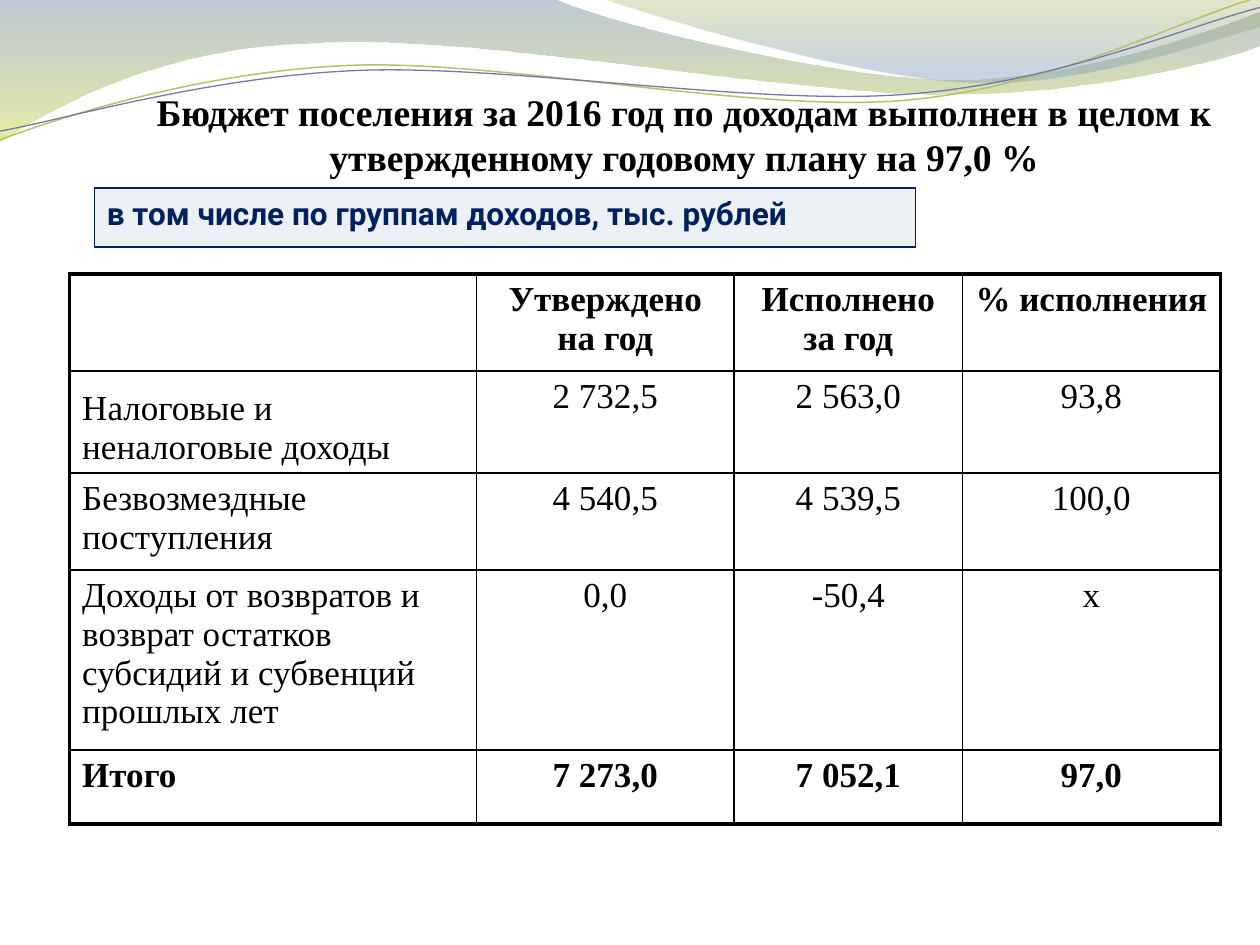
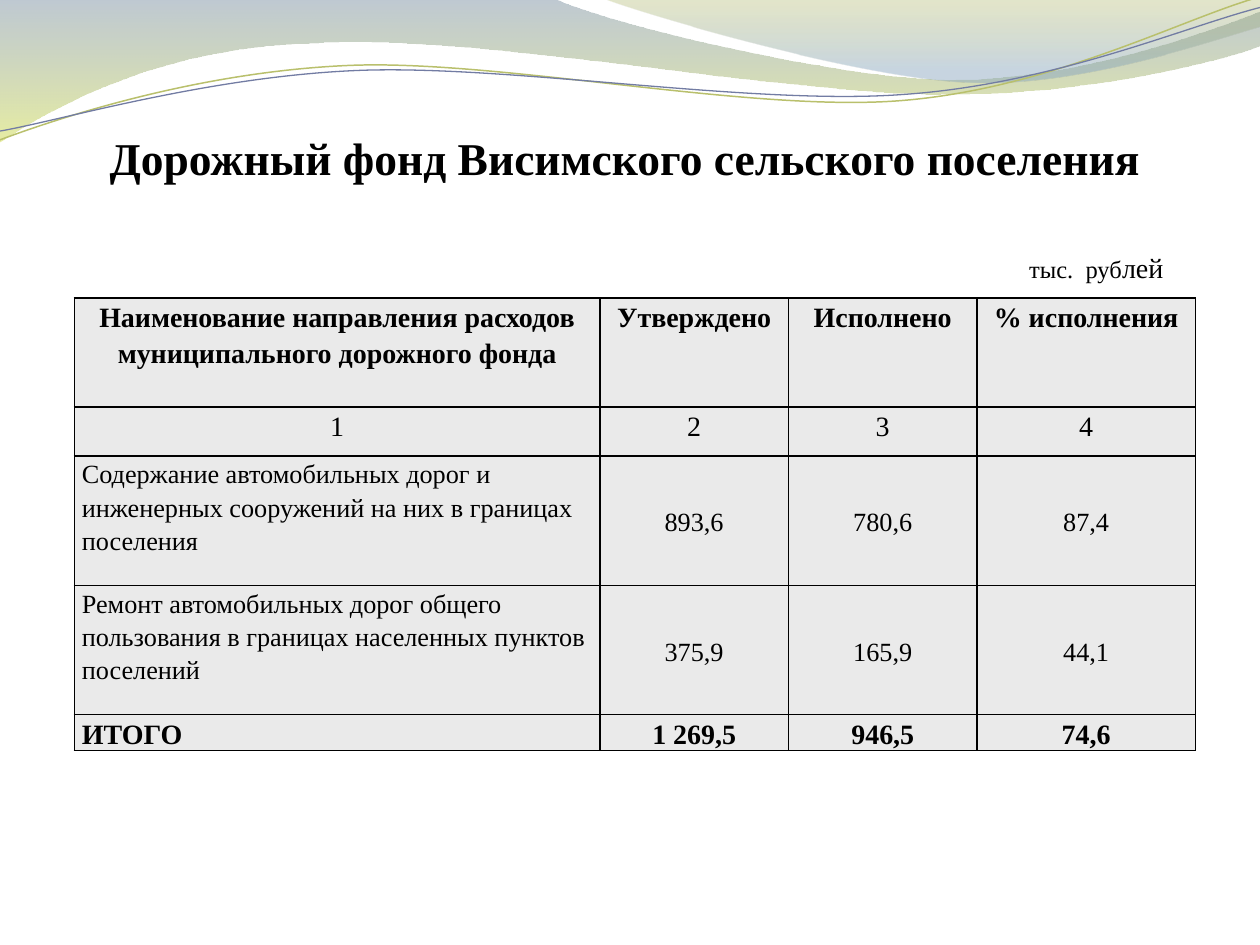
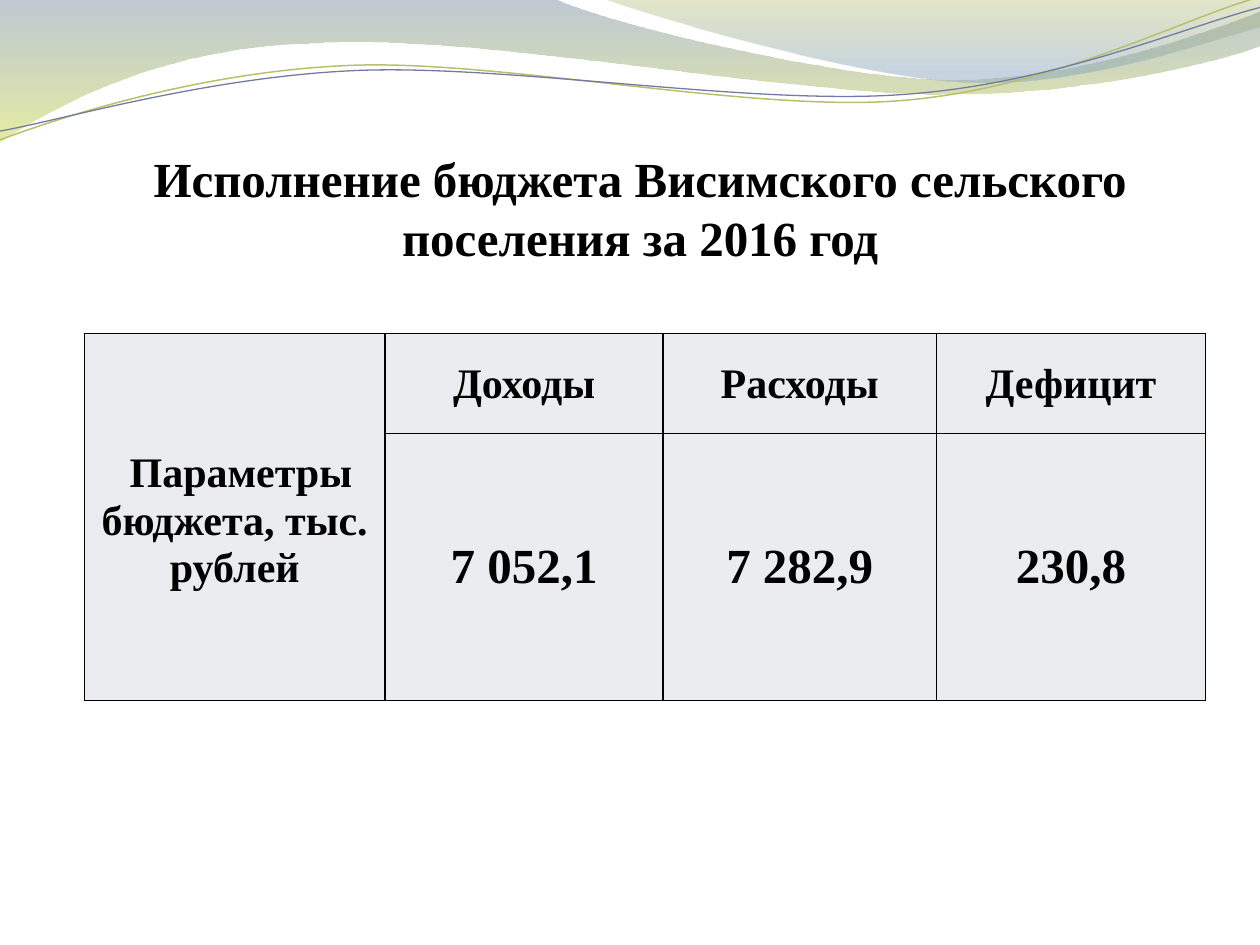
from math import cos, radians, sin

from lxml import etree
from pptx import Presentation
from pptx.dml.color import RGBColor
from pptx.enum.shapes import MSO_SHAPE
from pptx.enum.text import MSO_ANCHOR, MSO_AUTO_SIZE, PP_ALIGN
from pptx.oxml.ns import qn
from pptx.util import Pt

RECT = MSO_SHAPE.RECTANGLE
TOP, MIDDLE, BOTTOM = MSO_ANCHOR.TOP, MSO_ANCHOR.MIDDLE, MSO_ANCHOR.BOTTOM
LEFT, CENTER, JUSTIFY = PP_ALIGN.LEFT, PP_ALIGN.CENTER, PP_ALIGN.JUSTIFY
NO_AUTOSIZE = MSO_AUTO_SIZE.NONE

BLACK = RGBColor(0x00, 0x00, 0x00)
NAVY = RGBColor(0x00, 0x20, 0x60)
PALE_BLUE = RGBColor(0xEC, 0xF1, 0xF5)
LIGHT_GREY = RGBColor(0xEA, 0xEA, 0xEA)
COOL_GREY = RGBColor(0xEB, 0xEC, 0xF0)
STEEL = RGBColor(0x72, 0x88, 0x9B)
LIME = RGBColor(0xD3, 0xDE, 0x57)
OLIVE = RGBColor(0xA4, 0xAC, 0x50)
SKY = RGBColor(0x84, 0xA3, 0xBD)
SOFT_GREEN = RGBColor(0xB9, 0xC0, 0x6C)
VIOLET = RGBColor(0x72, 0x7C, 0xA3)

SERIF, SANS = "Times New Roman", "Roboto"
TITLE_ONLY = 5
TILT = -2.7

# Paths in points: a pair is a corner, six numbers are a Bezier curve.
WAVE = [(0, 0), (316.8, -0.7),
        (342.7, 12.2, 478.1, 45.4, 545.8, 45.4),
        (614.2, 45.4, 689.8, 18.7, 720, 6.5), (720.7, 25.9),
        (707.8, 31.7, 626.4, 54.7, 537.1, 54),
        (447.8, 54, 275, 20.2, 185, 24.5),
        (92.9, 25.9, 33.1, 59.8, -0.7, 81.4), (0, 0)]
RIGHT_WAVE = [(344.9, -0.7),
              (366.5, 7.9, 491, 44.6, 553.7, 46.8),
              (616.3, 49.7, 691.9, 23, 720, 15.1), (720, 0), (344.9, -0.7)]
GREEN_CURVE = [(0, 79.9),
               (34.6, 67, 113.8, 41, 199.4, 37.4),
               (284.4, 33.8, 427, 64.1, 513.4, 57.6),
               (599.8, 51.1, 675.4, 10.8, 718.6, -1.4)]
VIOLET_CURVE = [(0, 74.9),
                (33.8, 69.1, 118.1, 43.9, 203.8, 40.3),
                (290.2, 36.7, 429.8, 60.5, 516.2, 54),
                (601.9, 48.2, 677.5, 15.1, 720, 4.3)]


def turn(point, center, degrees):
    (x, y), (cx, cy) = point, center
    c, n = cos(radians(degrees)), sin(radians(degrees))
    return (cx + (x - cx) * c - (y - cy) * n, cy + (x - cx) * n + (y - cy) * c)


def add_outline(s, path, closed, center=(0, 0), tilt=0):
    """Draw a path; a tilted one is laid level first and then rotated."""
    points = [turn(step[i:i + 2], center, -tilt)
              for step in path for i in range(0, len(step), 2)]
    points = [(Pt(x), Pt(y)) for x, y in points]
    builder = s.shapes.build_freeform(*points[0])
    builder.add_line_segments(points[1:], close=closed)
    shape = builder.convert_to_shape()
    shape.rotation = tilt
    shape.shadow.inherit = False
    segments = iter(list(shape.element.iter(qn("a:lnTo"))))
    for step in path[1:]:
        segment = next(segments)
        if len(step) == 6:
            segment.tag = qn("a:cubicBezTo")
            for _ in range(2):
                extra = next(segments)
                segment.append(extra[0])
                extra.getparent().remove(extra)
    return shape


def add_wave(s, path, stops):
    """Fill a closed path from top to bottom; stops are (position, colour, alpha %)."""
    shape = add_outline(s, path, True)
    shape.line.fill.background()
    shape.fill.gradient()
    shape.fill.gradient_angle = 270
    for stop, (position, color, _) in zip(shape.fill.gradient_stops, stops):
        stop.position = position
        stop.color.rgb = color
    colors = shape.element.spPr.iter(qn("a:srgbClr"))
    for color, (_, _, alpha) in zip(colors, stops):
        etree.SubElement(color, qn("a:alpha"), val=str(alpha * 1000))
    return shape


def add_curve(s, path, center, color, width):
    shape = add_outline(s, path, False, center, TILT)
    shape.fill.background()
    shape.line.color.rgb = color
    shape.line.width = Pt(width)
    return shape


def decorate_master(prs, s):
    """Draw the top band on a slide and move it behind everything on the master."""
    band = [add_wave(s, WAVE, [(0, STEEL, 45), (1, LIME, 55)]),
            add_wave(s, RIGHT_WAVE, [(0, OLIVE, 30), (0.8, SKY, 45)]),
            add_curve(s, GREEN_CURVE, (359.3, 41.4), SOFT_GREEN, 0.85),
            add_curve(s, VIOLET_CURVE, (359.6, 42.5), VIOLET, 0.75)]
    tree = prs.slide_master.shapes.element
    for i, shape in enumerate(band, start=2):
        tree.insert(i, shape.element)


def format_runs(tf, size, bold=False, align=LEFT, font=SERIF, color=BLACK):
    for p in tf.paragraphs:
        p.alignment = align
        for r in p.runs:
            r.font.name = font
            r.font.size = Pt(size)
            r.font.bold = bold
            r.font.color.rgb = color


def place(shape, left, top, width, height):
    shape.left, shape.top = Pt(left), Pt(top)
    shape.width, shape.height = Pt(width), Pt(height)


def set_margins(target, margins):
    (target.margin_left, target.margin_top,
     target.margin_right, target.margin_bottom) = map(Pt, margins)


def set_title(s, text, box, size, anchor=BOTTOM, margins=(0, 3.6, 0, 0)):
    title = s.shapes.title
    place(title, *box)
    tf = title.text_frame
    tf.text = text
    tf.word_wrap = True
    tf.auto_size = NO_AUTOSIZE
    tf.vertical_anchor = anchor
    set_margins(tf, margins)
    format_runs(tf, size, True, CENTER)


def add_label(s, text, box):
    shape = s.shapes.add_shape(RECT, *map(Pt, box))
    shape.shadow.inherit = False
    shape.fill.solid()
    shape.fill.fore_color.rgb = PALE_BLUE
    shape.line.color.rgb = NAVY
    shape.line.width = Pt(0.75)
    tf = shape.text_frame
    tf.text = text
    tf.vertical_anchor = TOP
    format_runs(tf, 18, True, font=SANS, color=NAVY)


def add_unit_note(s, box):
    tf = s.shapes.add_textbox(*map(Pt, box)).text_frame
    tf.word_wrap = True
    p = tf.paragraphs[0]
    p.text = "тыс.  руб"
    p.add_run().text = "лей"
    format_runs(tf, 14)
    p.runs[1].font.size = Pt(16)


def set_borders(cell, widths):
    """Draw black borders; widths are for left, right, top and bottom."""
    tcPr = cell._tc.get_or_add_tcPr()
    for side, width in zip("LRTB", widths):
        ln = etree.SubElement(tcPr, qn(f"a:ln{side}"), w=str(Pt(width)))
        fill = etree.SubElement(ln, qn("a:solidFill"))
        etree.SubElement(fill, qn("a:srgbClr"), val=str(BLACK))


def add_table(s, left, top, widths, heights, rows, size, fill=None, outer=1,
              margins=(7.2, 3.6, 7.2, 3.6), spacing=1.0):
    """Add a table of centred text whose first and last rows are bold."""
    frame = s.shapes.add_table(len(heights), len(widths), Pt(left), Pt(top),
                               Pt(sum(widths)), Pt(sum(heights)))
    table = frame.table
    table.first_row = table.horz_banding = False
    for column, width in zip(table.columns, widths):
        column.width = Pt(width)
    for row, height in zip(table.rows, heights):
        row.height = Pt(height)
    last_row, last_col = len(heights) - 1, len(widths) - 1
    for i, texts in enumerate(rows):
        for j, text in enumerate(texts):
            cell = table.cell(i, j)
            cell.text = text
            set_margins(cell, margins)
            edges = (j == 0, j == last_col, i == 0, i == last_row)
            set_borders(cell, [outer if edge else 1 for edge in edges])
            if fill is None:
                cell.fill.background()
            else:
                cell.fill.solid()
                cell.fill.fore_color.rgb = fill
            format_runs(cell.text_frame, size, i in (0, last_row), CENTER)
            cell.text_frame.paragraphs[0].line_spacing = spacing
    return table


def build_income(s):
    set_title(s, "Бюджет поселения за 2016 год по доходам выполнен в целом к "
              "утвержденному годовому плану на 97,0 %",
              (73.2, 47.2, 635.8, 59), 21.5, TOP, (7.2, 3.6, 7.2, 3.6))
    add_label(s, "в том числе по группам доходов, тыс. рублей", (54, 107.5, 469.2, 33.8))
    rows = [
        ["", "Утверждено на год", "Исполнено за год", "% исполнения"],
        ["Налоговые и неналоговые доходы", "2 732,5", "2 563,0", "93,8"],
        ["Безвозмездные поступления", "4 540,5", "4 539,5", "100,0"],
        ["Доходы от возвратов и возврат остатков субсидий и субвенций прошлых лет",
         "0,0", "-50,4", "х"],
        ["Итого", "7 273,0", "7 052,1", "97,0"],
    ]
    table = add_table(s, 39.8, 156.6, [232.4, 147.4, 130.4, 147.4],
                      [55.4, 58.2, 55.4, 103, 42.2], rows, 20, outer=2.25)
    for i in range(1, len(rows)):
        table.cell(i, 0).text_frame.paragraphs[0].alignment = LEFT
    table.cell(1, 0).vertical_anchor = BOTTOM


def build_road_fund(s):
    set_title(s, "Дорожный фонд Висимского сельского поселения",
              (20, 66, 674.6, 39.6), 26)
    rows = [
        ["Наименование направления расходов муниципального дорожного фонда",
         "Утверждено", "Исполнено", "% исполнения"],
        ["1", "2", "3", "4"],
        ["Содержание автомобильных дорог и инженерных сооружений на них в границах поселения",
         "893,6", "780,6", "87,4"],
        ["Ремонт автомобильных дорог общего пользования в границах населенных пунктов поселений",
         "375,9", "165,9", "44,1"],
        ["ИТОГО", "1 269,5", "946,5", "74,6"],
    ]
    table = add_table(s, 42.5, 170.4, [300.3, 107.8, 107.8, 124.7],
                      [62.3, 28, 74, 73.8, 20.5], rows, 16, LIGHT_GREY,
                      margins=(4.3, 0, 4.3, 0), spacing=1.15)
    for i in (2, 3):
        for j in range(4):
            cell = table.cell(i, j)
            format_runs(cell.text_frame, 15, align=CENTER if j else LEFT)
            cell.vertical_anchor = MIDDLE if j else TOP
    table.cell(4, 0).text_frame.paragraphs[0].alignment = JUSTIFY
    add_unit_note(s, (581, 139.7, 96.5, 26.6))


def build_execution(s):
    set_title(s, "Исполнение бюджета Висимского сельского поселения за 2016 год",
              (42.5, 66, 646.6, 86.4), 28)
    rows = [[" ", "Доходы", "Расходы", "Дефицит"],
            ["", "7 052,1", "7 282,9", "230,8"]]
    table = add_table(s, 48.2, 190.6, [171.9, 158.8, 156.2, 153.9], [57, 152.6],
                      rows, 24, COOL_GREY, margins=(0.7, 0.7, 0.7, 0))
    for cell in table.iter_cells():
        cell.vertical_anchor = MIDDLE
    for j in range(1, 4):
        format_runs(table.cell(1, j).text_frame, 28, True, CENTER)
    heading = table.cell(0, 0)
    heading.merge(table.cell(1, 0))
    p = heading.text_frame.paragraphs[0]
    p.add_run().text = "Параметры бюджета, тыс. рублей"
    format_runs(heading.text_frame, 24, True, CENTER)
    p.runs[0].font.size = Pt(28)


def main():
    prs = Presentation()
    prs.slide_width, prs.slide_height = Pt(720), Pt(540)
    layout = prs.slide_layouts[TITLE_ONLY]
    for build in (build_income, build_road_fund, build_execution):
        build(prs.slides.add_slide(layout))
    decorate_master(prs, prs.slides[0])
    prs.save("out.pptx")


if __name__ == "__main__":
    main()
